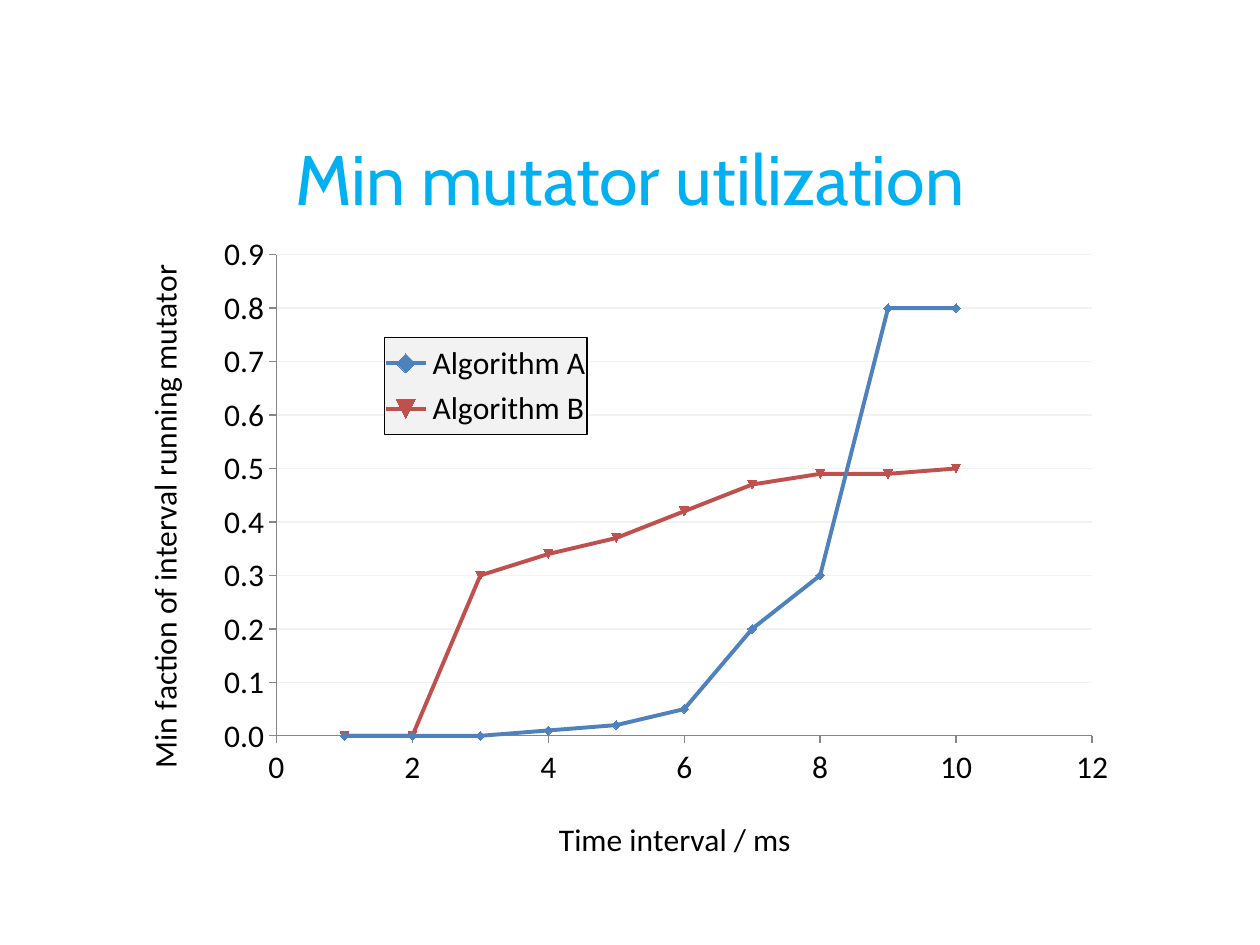
import pptx
import pptx.chart.data
import pptx.dml.color
import pptx.enum.chart
import pptx.enum.text
import pptx.oxml
import pptx.oxml.ns
import pptx.util

Cm = pptx.util.Cm
Pt = pptx.util.Pt
RGBColor = pptx.dml.color.RGBColor
qn = pptx.oxml.ns.qn

BLACK = RGBColor(0x00, 0x00, 0x00)
CYAN = RGBColor(0x00, 0xB0, 0xF0)
BLUE = RGBColor(0x4F, 0x81, 0xBD)
RED = RGBColor(0xC0, 0x50, 0x4D)
PALE = RGBColor(0xF2, 0xF2, 0xF2)
GREY = RGBColor(0x86, 0x86, 0x86)

CURVES = [
    ("Algorithm A", BLUE, [0, 0, 0, 0.01, 0.02, 0.05, 0.2, 0.3, 0.8, 0.8]),
    ("Algorithm B", RED, [0, 0, 0.3, 0.34, 0.37, 0.42, 0.47, 0.49, 0.49, 0.5]),
]


class Deck:
    title_font = "Cabin"
    chart_font = "Calibri"
    chart_size = Pt(18)

    def __init__(self):
        self.prs = pptx.Presentation()
        self.prs.slide_width = Cm(25.4)
        self.prs.slide_height = Cm(19.05)
        self.s = self.prs.slides.add_slide(self.prs.slide_layouts[5])

    def run(self, p, text, font, size, color):
        r = p.add_run()
        r.text = text
        r.font.name = font
        r.font.size = size
        r.font.bold = False
        r.font.color.rgb = color

    def title(self, text, left, top, width, height):
        sp = self.s.shapes.title
        sp.left, sp.top, sp.width, sp.height = Cm(left), Cm(top), Cm(width), Cm(height)
        tf = sp.text_frame
        tf.word_wrap = True
        tf.vertical_anchor = pptx.enum.text.MSO_ANCHOR.MIDDLE
        p = tf.paragraphs[0]
        p.alignment = pptx.enum.text.PP_ALIGN.CENTER
        self.run(p, text, self.title_font, Pt(40), CYAN)

    def place(self, parent, index, inner=False, **edges):
        for old in parent.findall(qn("c:layout")):
            parent.remove(old)
        target = '<c:layoutTarget val="inner"/>' if inner else ""
        modes = "".join(f'<c:{k}Mode val="edge"/>' for k in "xy")
        values = "".join(f'<c:{k} val="{v}"/>' for k, v in edges.items())
        parent.insert(index, pptx.oxml.parse_xml(
            f'<c:layout {pptx.oxml.ns.nsdecls("c")}><c:manualLayout>'
            f"{target}{modes}{values}</c:manualLayout></c:layout>"))

    def axis(self, axis, title, top, step, fmt, x, y, rotation=0):
        axis.minimum_scale = 0
        axis.maximum_scale = top
        axis.major_unit = step
        axis.has_major_gridlines = False
        axis.major_tick_mark = pptx.enum.chart.XL_TICK_MARK.OUTSIDE
        axis.tick_labels.number_format = fmt
        axis.tick_labels.number_format_is_linked = False
        axis.format.line.color.rgb = GREY
        axis.format.line.width = Pt(0.75)
        tf = axis.axis_title.text_frame
        self.run(tf.paragraphs[0], title, self.chart_font, self.chart_size, BLACK)
        body = tf._txBody.find(qn("a:bodyPr"))
        body.set("rot", str(rotation * 60000))
        body.set("vert", "horz")
        self.place(axis.axis_title._element, 1, x=x, y=y)

    def legend(self, chart):
        chart.has_legend = True
        legend = chart.legend
        legend.position = pptx.enum.chart.XL_LEGEND_POSITION.RIGHT
        legend.include_in_layout = False
        el = legend._element
        self.place(el, 1, x=0.28, y=0.17, w=0.18, h=0.15)
        el.find(qn("c:overlay")).addnext(pptx.oxml.parse_xml(
            f'<c:spPr {pptx.oxml.ns.nsdecls("c", "a")}>'
            f'<a:solidFill><a:srgbClr val="{PALE}"/></a:solidFill>'
            f'<a:ln w="9525"><a:solidFill><a:srgbClr val="{BLACK}"/></a:solidFill></a:ln>'
            "</c:spPr>"))

    def scatter(self, curves, left, top, width, height):
        data = pptx.chart.data.XyChartData()
        for name, _, values in curves:
            series = data.add_series(name)
            for x, y in enumerate(values, 1):
                series.add_data_point(x, y)
        chart = self.s.shapes.add_chart(
            pptx.enum.chart.XL_CHART_TYPE.XY_SCATTER_LINES,
            Cm(left), Cm(top), Cm(width), Cm(height), data).chart
        chart.has_title = False
        chart.font.name = self.chart_font
        chart.font.size = self.chart_size
        chart.font.color.rgb = BLACK
        plot = chart.plots[0]
        plot.vary_by_categories = False
        for i, (series, (_, color, _)) in enumerate(zip(plot.series, curves), 1):
            series._element.find(qn("c:idx")).set("val", str(i))
            series.smooth = False
            series.format.line.color.rgb = color
            series.format.line.width = Pt(2.25)
            series.marker.size = 5
            series.marker.format.fill.solid()
            series.marker.format.fill.fore_color.rgb = color
            series.marker.format.line.color.rgb = color
        self.axis(chart.category_axis, "Time interval / ms", 12, 2, "General", 0.43, 0.9)
        self.axis(chart.value_axis, "Min faction of interval running mutator",
                  0.9, 0.1, "#,##0.0", 0.06, 0.05, -90)
        grid = chart.value_axis.major_gridlines.format.line
        grid.color.rgb = PALE
        grid.width = Pt(0.75)
        self.place(chart._chartSpace.chart.plotArea, 0, inner=True,
                   x=0.184, y=0.043, w=0.725, h=0.74)
        self.legend(chart)


def main():
    deck = Deck()
    deck.title("Min mutator utilization", 1.27, 1.98, 22.86, 3.18)
    deck.scatter(CURVES, 1.4, 4.57, 22.68, 13.11)
    deck.prs.save("out.pptx")


if __name__ == "__main__":
    main()
